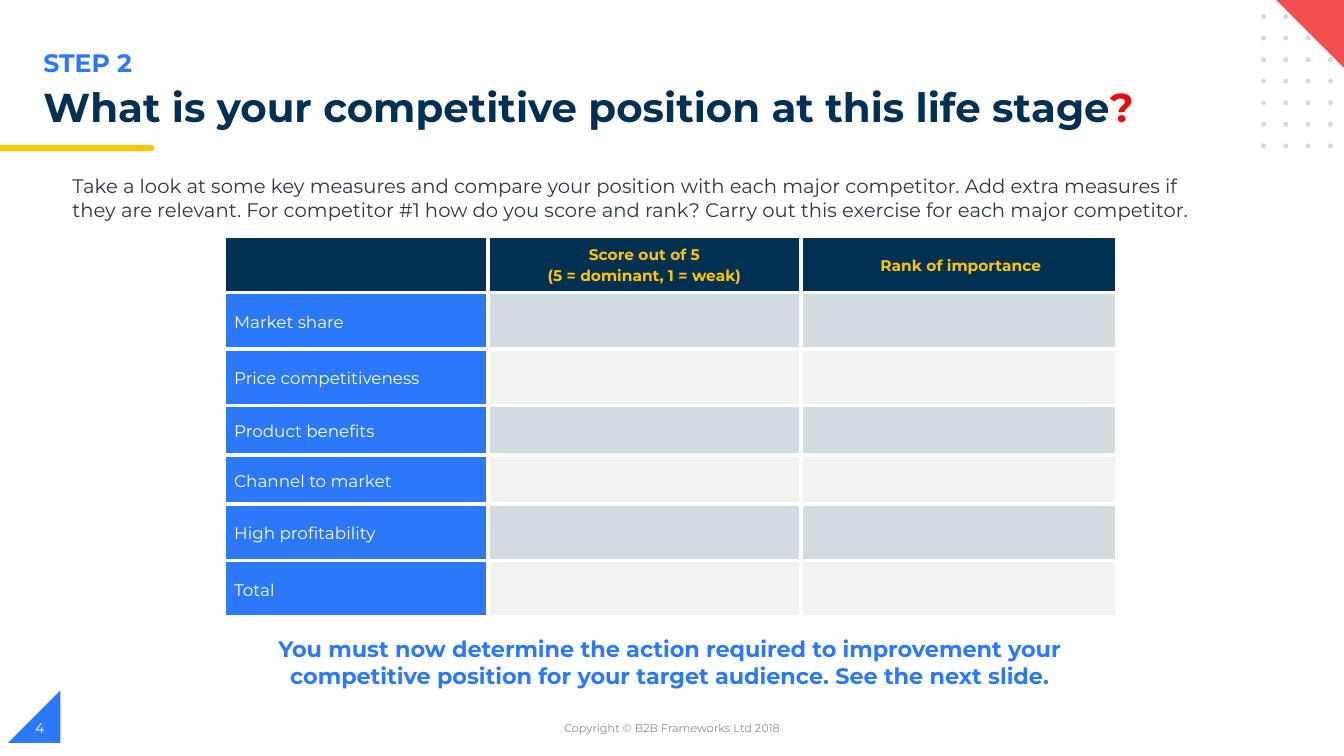
from lxml import etree
from pptx import Presentation
from pptx.dml.color import RGBColor
from pptx.enum.shapes import MSO_SHAPE
from pptx.enum.text import MSO_ANCHOR, PP_ALIGN
from pptx.oxml.ns import qn
from pptx.util import Pt

LEFT, CENTER = PP_ALIGN.LEFT, PP_ALIGN.CENTER
TOP, MIDDLE = MSO_ANCHOR.TOP, MSO_ANCHOR.MIDDLE
RECT, OVAL = MSO_SHAPE.RECTANGLE, MSO_SHAPE.OVAL
TRIANGLE, PILL = MSO_SHAPE.RIGHT_TRIANGLE, MSO_SHAPE.FLOWCHART_TERMINATOR

# Content
TITLE = [("What is your competitive position at this life stage", "navy"), ("?", "red")]
STEP = "STEP 2"
INTRO = ("Take a look at some key measures and compare your position with each major "
         "competitor. Add extra measures if they are relevant. For competitor #1 how do "
         "you score and rank? Carry out this exercise for each major competitor.")
ACTION = ("You must now determine the action required to improvement your competitive "
          "position for your target audience. See the next slide.")
COPYRIGHT = "Copyright © B2B Frameworks Ltd 2018"
PAGE = "4"
HEADERS = [[], ["Score out of 5", "(5 = dominant, 1 = weak)"], ["Rank of importance"]]
MEASURES = ["Market share", "Price competitiveness", "Product benefits",
            "Channel to market", "High profitability", "Total"]

THEME = {
    "font": "Montserrat",
    "color": {"navy": "023053", "blue": "2B79F8", "yellow": "FFC600", "red": "DF1010",
              "coral": "F24E4E", "mist": "D1DBE0", "pale": "F2F2F2", "ink": "2B3940",
              "grey": "888C97", "white": "FFFFFF"},
    "size": {"title": 28.8, "step": 18, "action": 16, "intro": 14, "measure": 12,
             "header": 11, "page": 10, "copyright": 8},
}

# Layout, in points
COLS = [188.6, 223.9, 225.4]
CELL_LEFT = [7.5, 4.3, 7.1]
CELL_RIGHT = 4.3
ROWS = [40.4, 40.4, 40.4, 35.2, 35.2, 40.4, 40.4]
TABLE_AT = (159.8, 168.5)
DOT_AT, DOT_STEP, DOT = (900.7, 10), (15.95, 15.4), 3.6
BORDER = 3

# Left, top, width, height, wording, size, colour, bold, alignment, anchor
TEXTS = [
    (318.2, 505.4, 324, 28.8, COPYRIGHT, "copyright", "grey", False, CENTER, MIDDLE),
    (18, 505.4, 216, 28.8, PAGE, "page", "white", False, LEFT, MIDDLE),
    (160.6, 450, 635.8, 46, ACTION, "action", "blue", True, CENTER, TOP),
    (44.6, 121, 828.7, 41, INTRO, "intro", "ink", False, LEFT, TOP),
    (23.8, 30.2, 481.7, 28.8, STEP, "step", "blue", True, LEFT, TOP),
]


def rgb(name):
    return RGBColor.from_string(THEME["color"][name])


def add_run(p, text, size, color, bold):
    r = p.add_run()
    r.text = text
    r.font.color.rgb = rgb(color)
    formats = {"name": THEME["font"], "size": Pt(THEME["size"][size]), "bold": bold}
    for name, value in formats.items():
        setattr(r.font, name, value)


def set_frame(tf, anchor):
    formats = {"word_wrap": True, "vertical_anchor": anchor,
               "margin_left": Pt(7.2), "margin_right": Pt(7.2),
               "margin_top": Pt(3.6), "margin_bottom": Pt(3.6)}
    for name, value in formats.items():
        setattr(tf, name, value)


def add_shape(s, kind, x, y, w, h, color, rotation=0):
    sp = s.shapes.add_shape(kind, Pt(x), Pt(y), Pt(w), Pt(h))
    sp.shadow.inherit = False
    sp.fill.solid()
    sp.fill.fore_color.rgb = rgb(color)
    sp.line.fill.background()
    sp.rotation = rotation


def add_text(s, x, y, w, h, text, size, color, bold, align, anchor):
    tf = s.shapes.add_textbox(Pt(x), Pt(y), Pt(w), Pt(h)).text_frame
    set_frame(tf, anchor)
    p = tf.paragraphs[0]
    p.alignment = align
    add_run(p, text, size, color, bold)


def set_title(s):
    sp = s.shapes.title
    sp.left, sp.top, sp.width, sp.height = Pt(23.8), Pt(59), Pt(849.6), Pt(40.3)
    set_frame(sp.text_frame, TOP)
    p = sp.text_frame.paragraphs[0]
    p.alignment, p.line_spacing = LEFT, 0.9
    for text, color in TITLE:
        add_run(p, text, "title", color, True)


def set_borders(cell):
    tc_pr = cell._tc.get_or_add_tcPr()
    for side in ("a:lnL", "a:lnR", "a:lnT", "a:lnB"):
        ln = etree.SubElement(tc_pr, qn(side), w=str(Pt(BORDER)))
        fill = etree.SubElement(ln, qn("a:solidFill"))
        etree.SubElement(fill, qn("a:srgbClr"), val=THEME["color"]["white"])


def fill_cell(cell, row, col, lines):
    set_borders(cell)
    band = "mist" if row % 2 else "pale"
    color = "navy" if row == 0 else "blue" if col == 0 else band
    cell.fill.solid()
    cell.fill.fore_color.rgb = rgb(color)
    formats = {"vertical_anchor": MIDDLE, "margin_left": Pt(CELL_LEFT[col]),
               "margin_right": Pt(CELL_RIGHT), "margin_top": 0, "margin_bottom": 0}
    for name, value in formats.items():
        setattr(cell, name, value)
    tf = cell.text_frame
    style = ("header", "yellow", True) if row == 0 else ("measure", "white", False)
    for i, line in enumerate(lines):
        p = tf.add_paragraph() if i else tf.paragraphs[0]
        p.alignment = LEFT if row else CENTER
        p.line_spacing = 1.15
        add_run(p, line, *style)


def add_score_table(s):
    x, y = TABLE_AT
    table = s.shapes.add_table(len(ROWS), len(COLS), Pt(x), Pt(y),
                               Pt(sum(COLS)), Pt(sum(ROWS))).table
    table.first_row = table.horz_banding = False
    for column, width in zip(table.columns, COLS):
        column.width = Pt(width)
    for row, height in zip(table.rows, ROWS):
        row.height = Pt(height)
    content = [HEADERS] + [[[measure], [], []] for measure in MEASURES]
    for i, row in enumerate(content):
        for j, lines in enumerate(row):
            fill_cell(table.cell(i, j), i, j, lines)


def main():
    prs = Presentation()
    prs.slide_width, prs.slide_height = Pt(960), Pt(540)
    s = prs.slides.add_slide(prs.slide_layouts[5])

    # Corner, title rule and dot grid
    add_shape(s, TRIANGLE, 5.8, 493.2, 37.4, 37.4, "blue", 270)
    add_shape(s, PILL, 96.5, 103.7, 13.7, 4.3, "yellow")
    add_shape(s, RECT, 0, 103.7, 101.5, 4.3, "yellow")
    for i in range(7):
        for j in range(4):
            add_shape(s, OVAL, DOT_AT[0] + j * DOT_STEP[0], DOT_AT[1] + i * DOT_STEP[1],
                      DOT, DOT, "mist")
    add_shape(s, TRIANGLE, 910.8, -0.7, 51.8, 51.8, "coral", 180)

    # Title, table and texts
    set_title(s)
    add_score_table(s)
    for text in TEXTS:
        add_text(s, *text)

    prs.save("out.pptx")


if __name__ == "__main__":
    main()
